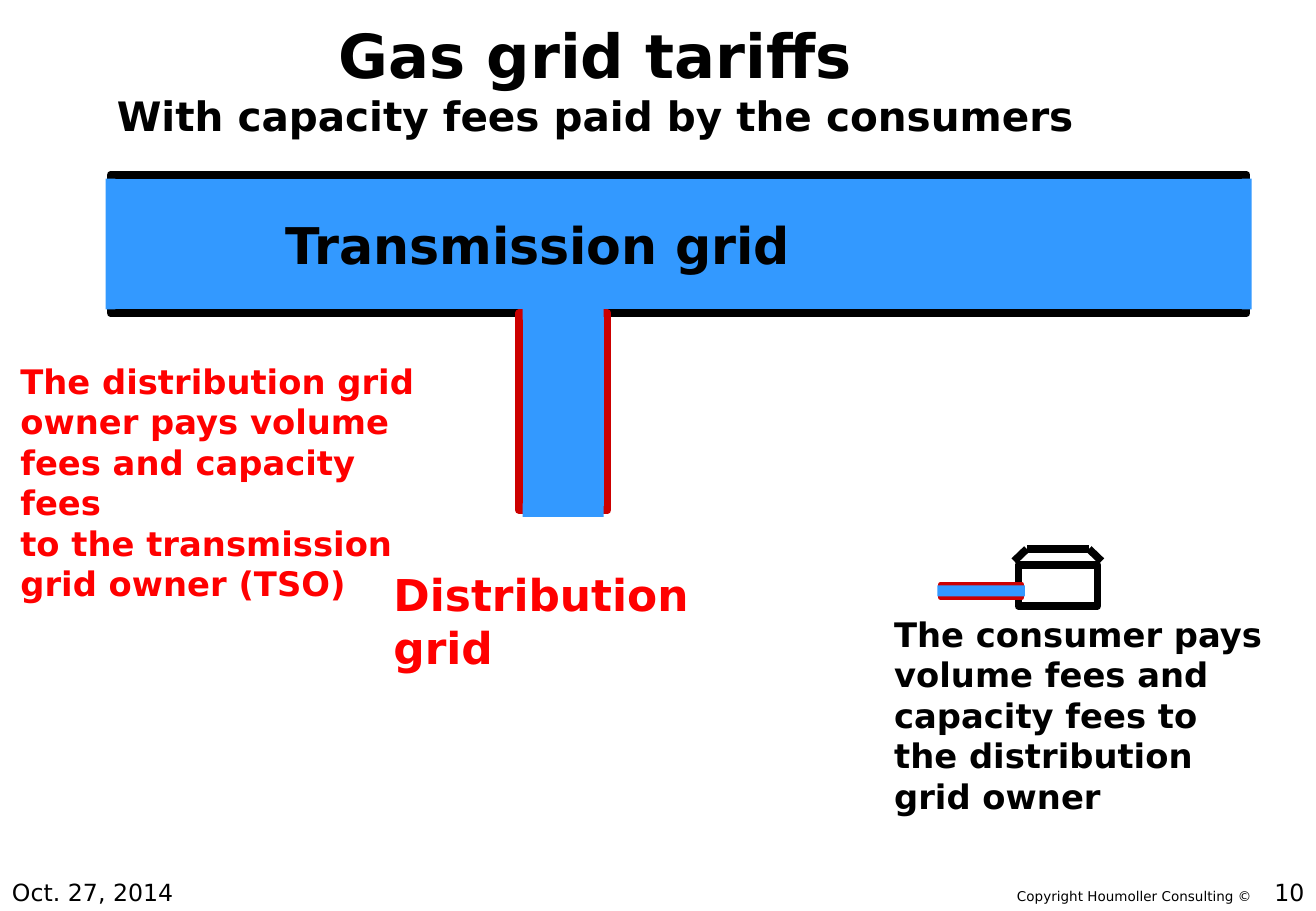
"""Builds a slide on gas grid tariffs with capacity fees paid by the consumers."""
from collections import namedtuple
from dataclasses import dataclass
from itertools import pairwise

from pptx import Presentation
from pptx.dml.color import RGBColor
from pptx.enum.shapes import MSO_CONNECTOR as Connector, MSO_SHAPE as Shape
from pptx.enum.text import MSO_ANCHOR as Anchor, MSO_AUTO_SIZE as AutoSize, PP_ALIGN as Align
from pptx.oxml.ns import qn
from pptx.util import Pt

Box = namedtuple("Box", "left top width height")


@dataclass(frozen=True)
class Theme:
    """Holds the colours and type sizes of the slide."""
    font: str = "DejaVu Sans"
    black: RGBColor = RGBColor(0, 0, 0)
    red: RGBColor = RGBColor(255, 0, 0)
    pipe_red: RGBColor = RGBColor(204, 0, 0)
    gas: RGBColor = RGBColor(51, 153, 255)
    title: int = 36
    subtitle: int = 24
    transmission: int = 30
    distribution: int = 26
    note: int = 20
    footer: int = 14
    copyright: int = 8
    wall: float = 4.5
    branch_wall: float = 3


THEME = Theme()


def apply(target, values):
    """Set each named format value on the target."""
    for name, value in values.items():
        setattr(target, name, value)


def place(box):
    """Turn a box in points into lengths."""
    return [Pt(value) for value in box]


def format_span(span, size, color, bold):
    """Set the typeface of a span."""
    apply(span.font, {"name": THEME.font, "size": Pt(size), "bold": bold})
    span.font.color.rgb = color


def add_text(page, box, lines, size, color=THEME.black, bold=True, wrap=True,
             align=Align.LEFT, anchor=Anchor.TOP):
    """Write one paragraph per line in a text box."""
    frame = page.shapes.add_textbox(*place(box)).text_frame
    apply(frame, {"word_wrap": wrap, "auto_size": AutoSize.NONE, "vertical_anchor": anchor})
    for index, line in enumerate(lines):
        para = frame.add_paragraph() if index else frame.paragraphs[0]
        para.alignment = align
        span = para.add_run()
        span.text = line
        format_span(span, size, color, bold)


def add_block(page, box, fill=None, edge=None, weight=THEME.wall):
    """Draw a rectangle with an optional fill and edge."""
    block = page.shapes.add_shape(Shape.RECTANGLE, *place(box))
    block.shadow.inherit = False
    if fill is None:
        block.fill.background()
    else:
        block.fill.solid()
        block.fill.fore_color.rgb = fill
    if edge is None:
        block.line.fill.background()
    else:
        block.line.color.rgb = edge
        block.line.width = Pt(weight)


def add_line(page, start, end):
    """Draw a straight black line between two points."""
    line = page.shapes.add_connector(Connector.STRAIGHT, *place(start + end))
    line.line.color.rgb = THEME.black
    line.line.width = Pt(THEME.wall)
    properties = line.element.spPr
    properties.append(properties.makeelement(qn("a:effectLst"), {}))


def add_heading(page, box):
    """Fill the title placeholder with the title and its subtitle."""
    title = page.shapes.title
    apply(title, dict(zip(box._fields, place(box))))
    frame = title.text_frame
    apply(frame, {"word_wrap": True, "auto_size": AutoSize.NONE, "vertical_anchor": Anchor.MIDDLE})
    para = frame.paragraphs[0]
    para.alignment = Align.CENTER
    for index, (text, size) in enumerate([
            ("Gas grid tariffs", THEME.title),
            ("With capacity fees paid by the consumers", THEME.subtitle)]):
        if index:
            para.add_line_break()
        span = para.add_run()
        span.text = text
        format_span(span, size, THEME.black, True)


def add_transmission(page, box):
    """Draw the open-ended transmission pipe with its name."""
    cap, inset = 5.8, THEME.wall / 2
    add_block(page, box, THEME.gas, THEME.black)
    for end in (box.left, box.left + box.width):
        add_block(page, Box(end - cap / 2, box.top + inset, cap, box.height - 2 * inset), THEME.gas)
    add_text(page, Box(box.left + 96.5, box.top + 19.5, 319, 44), ["Transmission grid"],
             THEME.transmission)


def add_distribution(page, box):
    """Draw the open-ended distribution pipe with its name below."""
    inset = THEME.wall / 2
    add_text(page, Box(box.left - 81.3, box.top + 147.5, 257, 39), ["Distribution grid"],
             THEME.distribution, THEME.red)
    add_block(page, box, THEME.gas, THEME.pipe_red)
    for middle, cap in ((box.top + box.height, 8), (box.top - 2, 11.5)):
        add_block(page, Box(box.left + inset, middle - cap / 2, box.width - 2 * inset, cap),
                  THEME.gas)


def add_consumer(page, box):
    """Draw the consumer's house and the branch pipe that supplies it."""
    add_block(page, box, edge=THEME.black)
    eaves, ridge = box.top - 2.2, box.top - 9.4
    right = box.left + box.width
    roof = [(box.left - 2.5, eaves), (box.left + 5, ridge), (right - 5, ridge), (right + 2.5, eaves)]
    for start, end in pairwise(roof):
        add_line(page, start, end)
    branch = Box(box.left - 46, box.top + 11.5, 48, 8)
    add_block(page, branch, edge=THEME.pipe_red, weight=THEME.branch_wall)
    add_block(page, Box(branch.left - 2, branch.top + 0.75, branch.width + 4, branch.height - 1.5),
              THEME.gas)


def add_footer(page, box):
    """Write the date, the copyright line and the page number."""
    side = 162.5
    right = box.left + box.width
    add_text(page, Box(right - 184.5, box.top + 12.2, 155.5, 17),
             ["Copyright Houmoller Consulting ©"], THEME.copyright, bold=False, wrap=False)
    for left, text, align in ((box.left, "Oct. 27, 2014", Align.LEFT),
                              (right - side, "10", Align.RIGHT)):
        add_text(page, Box(left, box.top, side, box.height), [text], THEME.footer,
                 bold=False, align=align, anchor=Anchor.MIDDLE)


def main():
    """Build and save the slide."""
    deck = Presentation()
    apply(deck, {"slide_width": Pt(779.76), "slide_height": Pt(540)})
    page = deck.slides.add_slide(deck.slide_layouts[5])
    add_heading(page, Box(28, -1.5, 649.5, 96.5))
    add_transmission(page, Box(65.5, 103.7, 673.2, 82))
    add_distribution(page, Box(307.4, 185.7, 52.6, 116.7))
    add_consumer(page, Box(603.4, 334.8, 46.8, 24.5))
    add_text(page, Box(5, 210.2, 266.4, 128),
             ["The distribution grid", "owner pays volume", "fees and capacity fees",
              "to the transmission", "grid owner (TSO)"], THEME.note, THEME.red)
    add_text(page, Box(522.7, 360, 234, 128),
             ["The consumer pays", "volume fees and", "capacity fees to",
              "the distribution", "grid owner"], THEME.note)
    add_footer(page, Box(0, 510.5, 780, 36))
    deck.save("out.pptx")


if __name__ == "__main__":
    main()
